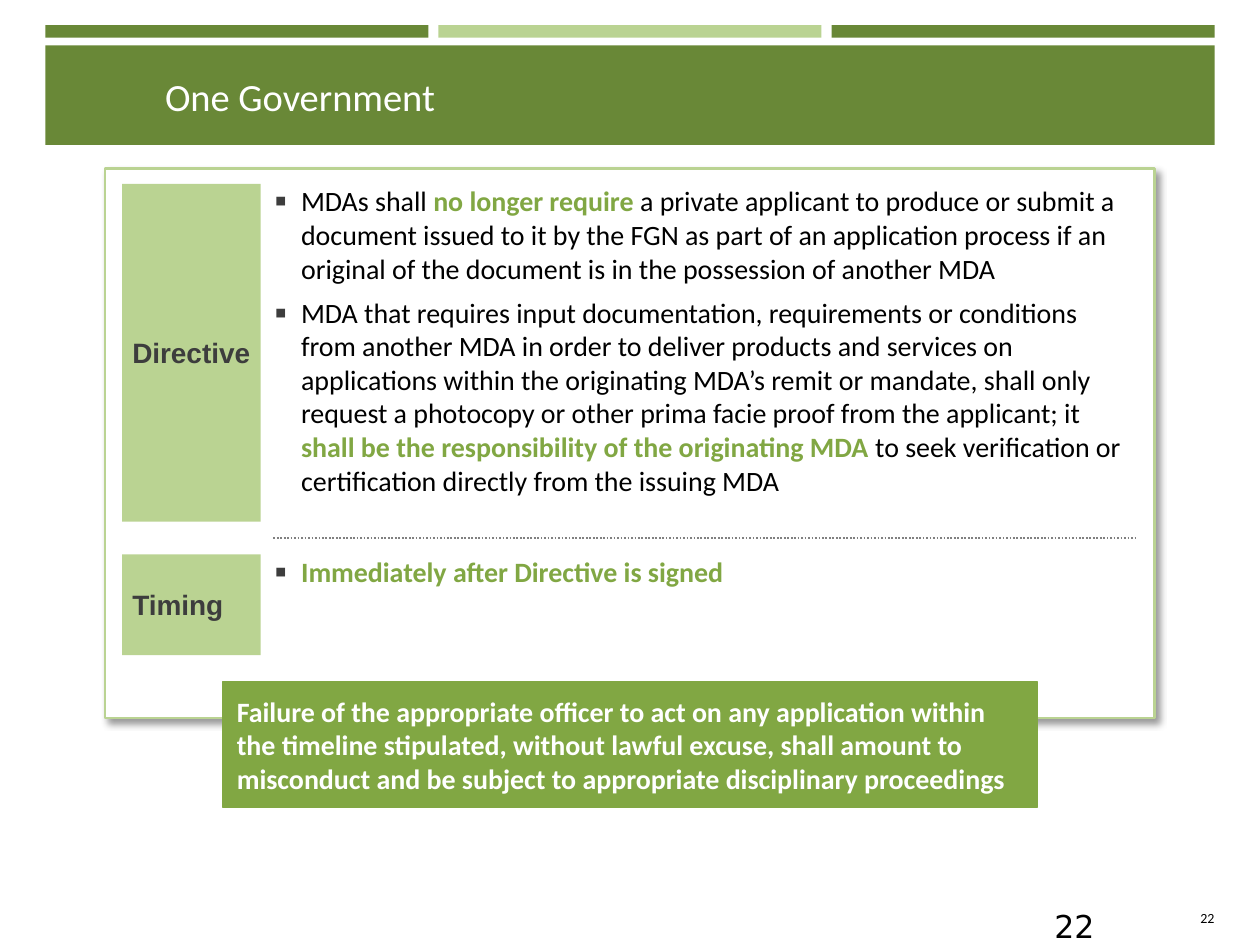
from dataclasses import dataclass

from lxml import etree
from pptx import Presentation
from pptx.dml.color import RGBColor
from pptx.enum.dml import MSO_LINE
from pptx.enum.shapes import MSO_CONNECTOR, MSO_SHAPE
from pptx.enum.text import MSO_ANCHOR, PP_ALIGN
from pptx.oxml.ns import qn
from pptx.util import Inches, Pt

RECT = MSO_SHAPE.RECTANGLE
STRAIGHT = MSO_CONNECTOR.STRAIGHT
DOTTED = MSO_LINE.ROUND_DOT
TOP, MIDDLE, BOTTOM = MSO_ANCHOR.TOP, MSO_ANCHOR.MIDDLE, MSO_ANCHOR.BOTTOM
LEFT, RIGHT = PP_ALIGN.LEFT, PP_ALIGN.RIGHT


@dataclass(frozen=True)
class Theme:
    dark: str = "698837"
    mid: str = "81A743"
    light: str = "BAD392"
    ink: str = "3D3D3D"
    rule: str = "808080"
    black: str = "000000"
    white: str = "FFFFFF"
    body_font: str = "Calibri"
    label_font: str = "Arial"
    number_font: str = "DejaVu Sans"
    title_size: int = 22
    body_size: int = 16
    number_size: int = 18
    footer_size: int = 8


THEME = Theme()

TITLE = "One Government"
PAGE = "22"
SECTIONS = [
    ("Directive", 1.46, 2.68, [
        [("MDAs shall ", False),
         ("no longer require", True),
         (" a private applicant to produce or submit a document issued to it by the FGN as part of "
          "an application process if an original of the document is in the possession of another MDA",
          False)],
        [("MDA that requires input documentation, requirements or conditions from another MDA in "
          "order to deliver products and services on applications within the originating MDA’s "
          "remit or mandate, shall only request a photocopy or other prima facie proof from the "
          "applicant; it ", False),
         ("shall be the responsibility of the originating MDA", True),
         (" to seek verification or certification directly from the issuing MDA", False)],
    ]),
    ("Timing", 4.4, 0.8, [[("Immediately after Directive is signed", True)]]),
]
WARNING = ("Failure of the appropriate officer to act on any application within the timeline "
           "stipulated, without lawful excuse, shall amount to misconduct and be subject to "
           "appropriate disciplinary proceedings")

SLIDE_W, SLIDE_H = 10, 7.5
MARGIN = 0.36
BANNER_W = SLIDE_W - 2 * MARGIN
STRIP_GAP = 0.08
STRIP_W = (BANNER_W - 2 * STRIP_GAP) / 3
CARD_W, WARNING_W = 8.33, 6.46
LABEL_X, LABEL_W = 0.97, 1.1
BODY_X, BODY_W = 2.17, 6.86


def color(value):
    return RGBColor.from_string(value)


def style(font, size, name, value, bold=False):
    font.size, font.name, font.bold = Pt(size), name, bold
    font.color.rgb = color(value)


def frame(shape, inset_x=0, inset_y=0, anchor=TOP, wrap=True):
    text = shape.text_frame
    text.word_wrap, text.vertical_anchor = wrap, anchor
    text.margin_left = text.margin_right = Inches(inset_x)
    text.margin_top = text.margin_bottom = Inches(inset_y)
    return text


def write(text, words, size, name, value, bold=False, align=LEFT):
    paragraph = text.paragraphs[0]
    paragraph.text, paragraph.alignment = words, align
    style(paragraph.font, size, name, value, bold)


def block(slide, x, y, w, h, fill, line=None, line_width=0.75):
    shape = slide.shapes.add_shape(RECT, Inches(x), Inches(y), Inches(w), Inches(h))
    shape.shadow.inherit = False
    shape.fill.solid()
    shape.fill.fore_color.rgb = color(fill)
    if line:
        shape.line.color.rgb = color(line)
        shape.line.width = Pt(line_width)
    else:
        shape.line.fill.background()
    return shape


def textbox(slide, x, y, w, h):
    return slide.shapes.add_textbox(Inches(x), Inches(y), Inches(w), Inches(h))


def child(parent, tag, **attributes):
    return etree.SubElement(parent, qn(tag), {k: str(v) for k, v in attributes.items()})


def drop_shadow(shape):
    effects = shape._element.spPr.find(qn("a:effectLst"))
    shadow = child(effects, "a:outerShdw", blurRad=Pt(4), dist=Pt(3), dir=45 * 60000,
                   algn="tl", rotWithShape=0)
    child(child(shadow, "a:srgbClr", val=THEME.black), "a:alpha", val=40000)


def add_bullet(paragraph):
    properties = paragraph._p.get_or_add_pPr()
    properties.set("marL", str(Inches(0.22)))
    properties.set("indent", str(Inches(-0.21)))
    child(child(properties, "a:buClr"), "a:srgbClr", val=THEME.ink)
    child(properties, "a:buSzPct", val=125000)
    child(properties, "a:buFont", typeface=THEME.label_font)
    child(properties, "a:buChar", char="▪")


def write_bullets(text, bullets):
    for i, runs in enumerate(bullets):
        paragraph = text.add_paragraph() if i else text.paragraphs[0]
        paragraph.space_before = Pt(3 if i else 0)
        paragraph.space_after = Pt(3)
        add_bullet(paragraph)
        for words, emphasis in runs:
            run = paragraph.add_run()
            run.text = words
            style(run.font, THEME.body_size, THEME.body_font,
                  THEME.mid if emphasis else THEME.black, emphasis)


def add_header(slide):
    block(slide, MARGIN, 0.36, BANNER_W, 0.79, THEME.dark)
    for i, fill in enumerate((THEME.dark, THEME.light, THEME.dark)):
        block(slide, MARGIN + i * (STRIP_W + STRIP_GAP), 0.2, STRIP_W, 0.1, fill)
    title = slide.shapes.title
    title.left, title.top, title.width, title.height = map(Inches, (1.31, 0.58, 8.25, 0.37))
    slide.shapes._spTree.append(title._element)
    write(frame(title, anchor=BOTTOM), TITLE, THEME.title_size, THEME.body_font, THEME.white)


def add_page_numbers(slide):
    footer = frame(textbox(slide, 9.5, 7.22, 0.14, 0.13), anchor=MIDDLE, wrap=False)
    write(footer, PAGE, THEME.footer_size, THEME.body_font, THEME.black, align=RIGHT)
    number = frame(textbox(slide, 8.27, 7.15, 0.77, 0.4), 0.1, 0.05)
    write(number, PAGE, THEME.number_size, THEME.number_font, THEME.black)


def add_sections(slide):
    for label, y, h, bullets in SECTIONS:
        tag = frame(block(slide, LABEL_X, y, LABEL_W, h, THEME.light), 0.08, 0.08, MIDDLE)
        write(tag, label, THEME.body_size, THEME.label_font, THEME.ink, True)
        write_bullets(frame(textbox(slide, BODY_X, y, BODY_W, h)), bullets)
    (_, y, h, _), (_, next_y, _, _) = SECTIONS
    divider_y = Inches((y + h + next_y) / 2)
    divider = slide.shapes.add_connector(STRAIGHT, Inches(BODY_X), divider_y,
                                         Inches(BODY_X + BODY_W), divider_y)
    divider.line.color.rgb = color(THEME.rule)
    divider.line.width, divider.line.dash_style = Pt(1), DOTTED
    child(divider._element.spPr, "a:effectLst")


def main():
    deck = Presentation()
    deck.slide_width, deck.slide_height = Inches(SLIDE_W), Inches(SLIDE_H)
    slide = deck.slides.add_slide(deck.slide_layouts[5])
    add_header(slide)
    add_page_numbers(slide)
    drop_shadow(block(slide, (SLIDE_W - CARD_W) / 2, 1.34, CARD_W, 4.36,
                      THEME.white, THEME.light, 1.5))
    warning = block(slide, (SLIDE_W - WARNING_W) / 2, 5.41, WARNING_W, 1, THEME.mid, THEME.mid)
    write(frame(warning, 0.11, 0.05, MIDDLE), WARNING, THEME.body_size, THEME.body_font,
          THEME.white, True)
    add_sections(slide)
    deck.save("out.pptx")


if __name__ == "__main__":
    main()
